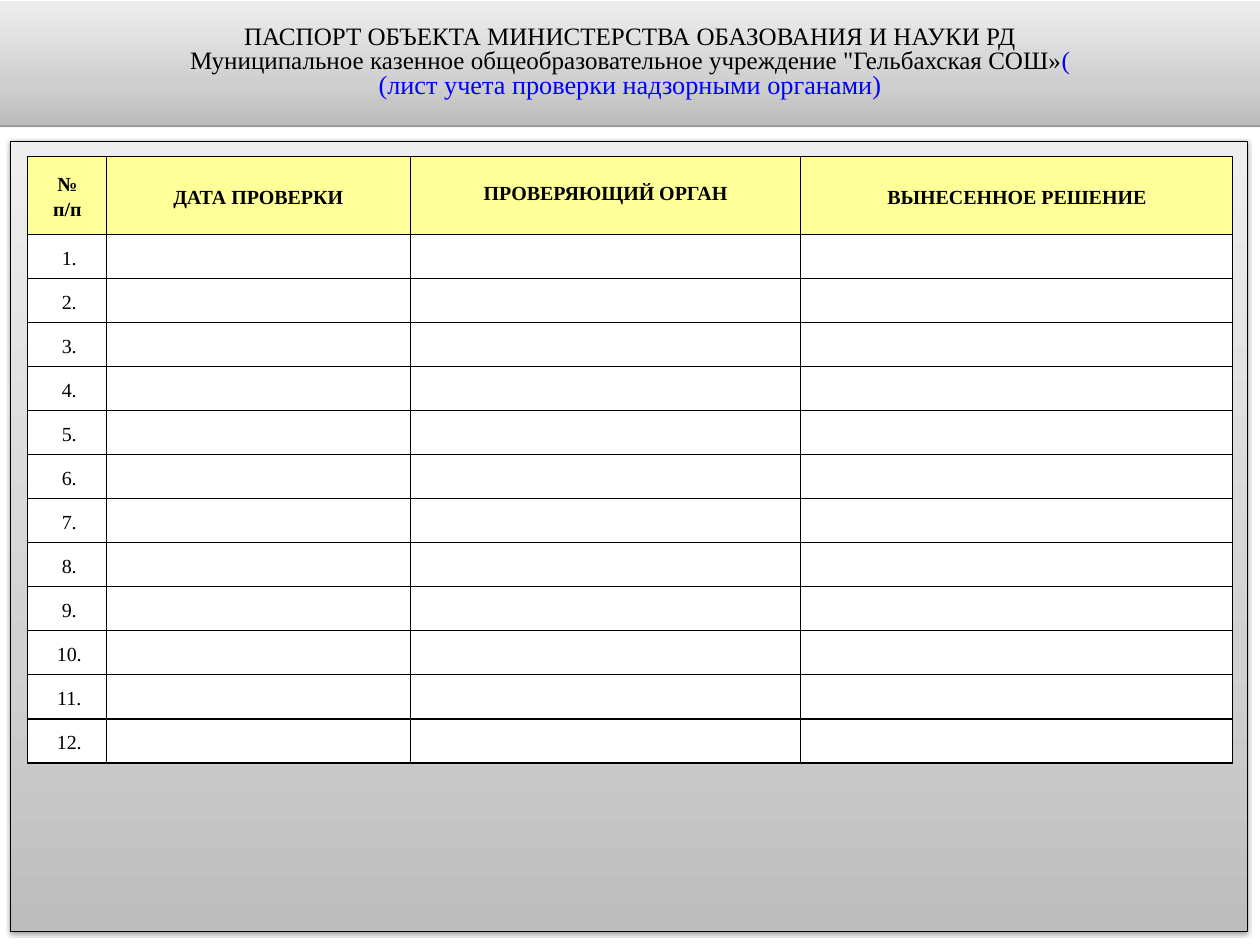
"""Builds the inspection log sheet of a school's site passport."""
from lxml.etree import SubElement
from pptx import Presentation
from pptx.dml.color import RGBColor
from pptx.enum.shapes import MSO_SHAPE
from pptx.enum.text import MSO_ANCHOR, PP_ALIGN
from pptx.oxml.ns import qn
from pptx.util import Inches, Pt

COLORS = {
    "ink": "000000", "accent": "0000FF", "header": "FFFF99", "row": "FFFFFF",
    "panel": ["BDBDBD", "D1D1D1", "EEEEEE"],
    "band": ["BCBCBC", "D0D0D0", "EDEDED"],
}
FONT = "Times New Roman"

deck = Presentation()
deck.slide_width, deck.slide_height = Inches(14), Inches(10.5)
slide = deck.slides.add_slide(deck.slide_layouts[6])
column, row = deck.slide_width / 140, deck.slide_height / 105


def add_panel(left, top, width, height, shades, blur):
    panel = slide.shapes.add_shape(
        MSO_SHAPE.RECTANGLE, int(left * column), int(top * row),
        int(width * column), int(height * row))
    panel.fill.gradient()
    panel.fill.gradient_angle = 90
    properties = panel._element.spPr
    stops = properties.find(qn("a:gradFill")).find(qn("a:gsLst"))
    stops.clear()
    for share, shade in zip((0, 35, 100), shades):
        stop = SubElement(stops, qn("a:gs"), pos=str(share * 1000))
        SubElement(stop, qn("a:srgbClr"), val=shade)
    panel.shadow.inherit = False
    shadow = SubElement(
        properties.find(qn("a:effectLst")), qn("a:outerShdw"),
        blurRad=str(Pt(blur)), dist=str(Pt(1.6)), dir="5400000", rotWithShape="0")
    shade = SubElement(shadow, qn("a:srgbClr"), val=COLORS["ink"])
    SubElement(shade, qn("a:alpha"), val="38000")
    return panel


def add_text(paragraph, text, size, color="ink", bold=False, spacing=1.15):
    paragraph.alignment = PP_ALIGN.CENTER
    paragraph.line_spacing = spacing
    run = paragraph.add_run()
    run.text = text
    run.font.name, run.font.size, run.font.bold = FONT, Pt(size), bold
    run.font.color.rgb = RGBColor.from_string(COLORS[color])


sheet = add_panel(1.2, 15.7, 137.4, 87.8, COLORS["panel"], 3.1)
sheet.line.color.rgb = RGBColor.from_string(COLORS["ink"])
sheet.line.width = Pt(0.75)

band = add_panel(0, 0.1, 140, 13.8, COLORS["band"], 0)
band.line.fill.background()
title = band.text_frame
title.word_wrap = True
title.vertical_anchor = MSO_ANCHOR.MIDDLE
title.margin_left = title.margin_right = int(1.2 * column)
title.margin_top = title.margin_bottom = int(0.6 * row)
title_lines = [
    [("ПАСПОРТ ОБЪЕКТА МИНИСТЕРСТВА ОБАЗОВАНИЯ И НАУКИ РД", 20, "ink")],
    [('Муниципальное казенное общеобразовательное учреждение "Гельбахская СОШ»', 20, "ink"),
     ("(", 20, "accent")],
    [("(лист учета проверки надзорными органами)", 21, "accent")],
]
for index, pieces in enumerate(title_lines):
    paragraph = title.add_paragraph() if index else title.paragraphs[0]
    for text, size, color in pieces:
        add_text(paragraph, text, size, color, spacing=0.8)

headings = [["№", "п/п"], ["ДАТА ПРОВЕРКИ"], ["ПРОВЕРЯЮЩИЙ ОРГАН"], ["ВЫНЕСЕННОЕ РЕШЕНИЕ"]]
widths = [8.7, 33.8, 43.4, 48]
heights = [8.7] + [4.89] * 12
log = slide.shapes.add_table(
    len(heights), len(widths), int(3.1 * column), int(17.4 * row),
    int(sum(widths) * column), int(sum(heights) * row)).table
log.first_row = log.horz_banding = False
for log_column, width in zip(log.columns, widths):
    log_column.width = int(width * column)

for number, height in enumerate(heights):
    log.rows[number].height = int(height * row)
    for position in range(len(widths)):
        cell = log.cell(number, position)
        cell.vertical_anchor = MSO_ANCHOR.MIDDLE
        cell.margin_left = cell.margin_right = int(0.4 * column)
        cell.margin_top = cell.margin_bottom = 0
        properties = cell._tc.get_or_add_tcPr()
        for side in ("lnL", "lnR", "lnT", "lnB"):
            border = SubElement(properties, qn(f"a:{side}"), w=str(Pt(1)))
            SubElement(SubElement(border, qn("a:solidFill")), qn("a:srgbClr"), val=COLORS["ink"])
        cell.fill.solid()
        cell.fill.fore_color.rgb = RGBColor.from_string(COLORS["row" if number else "header"])
        if number == 0:
            lines = headings[position]
        else:
            lines = [f"{number}."] if position == 0 else []
        spacing = Pt(14) if lines == ["ПРОВЕРЯЮЩИЙ ОРГАН"] else 1.15
        for index, text in enumerate(lines):
            paragraph = cell.text_frame.add_paragraph() if index else cell.text_frame.paragraphs[0]
            add_text(paragraph, text, 16, bold=number == 0, spacing=spacing)
            if position == 0:
                indent = 0.5 if number else 0.1
                paragraph._p.get_or_add_pPr().set("marL", str(int(indent * column)))

deck.save("out.pptx")
